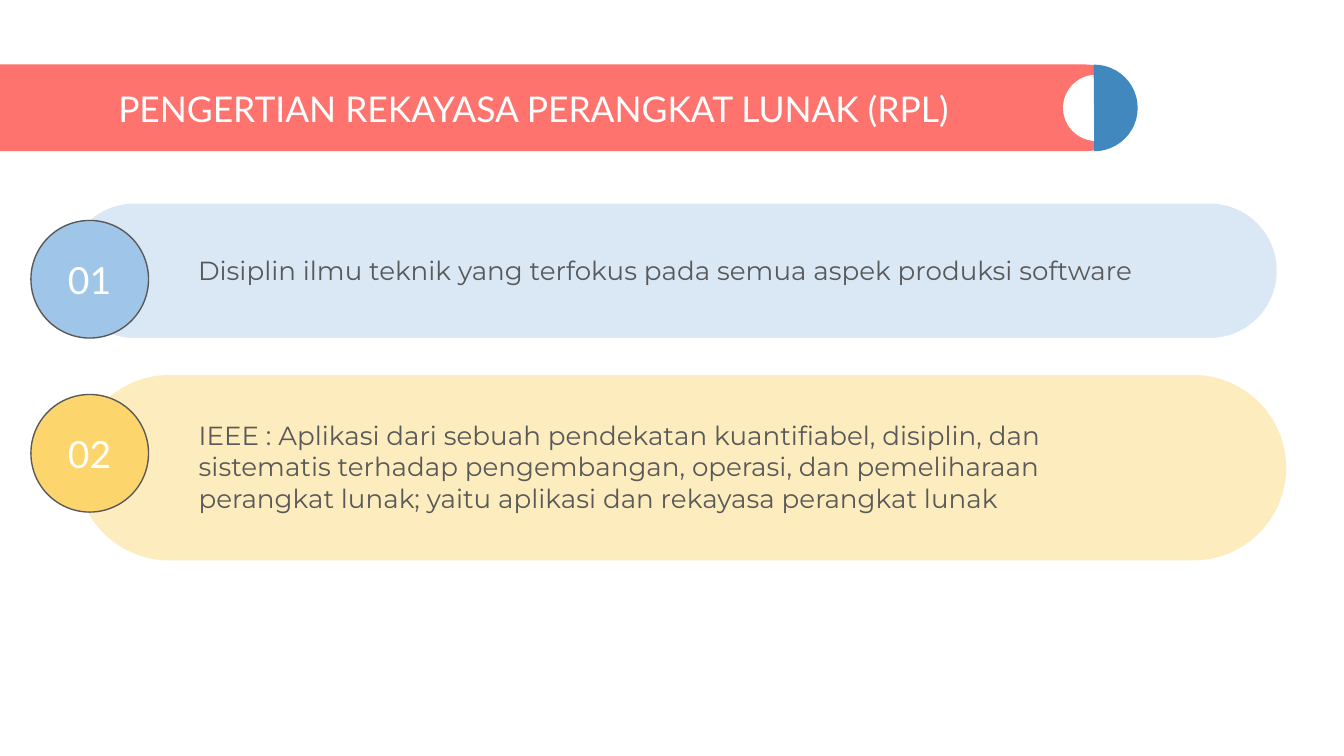
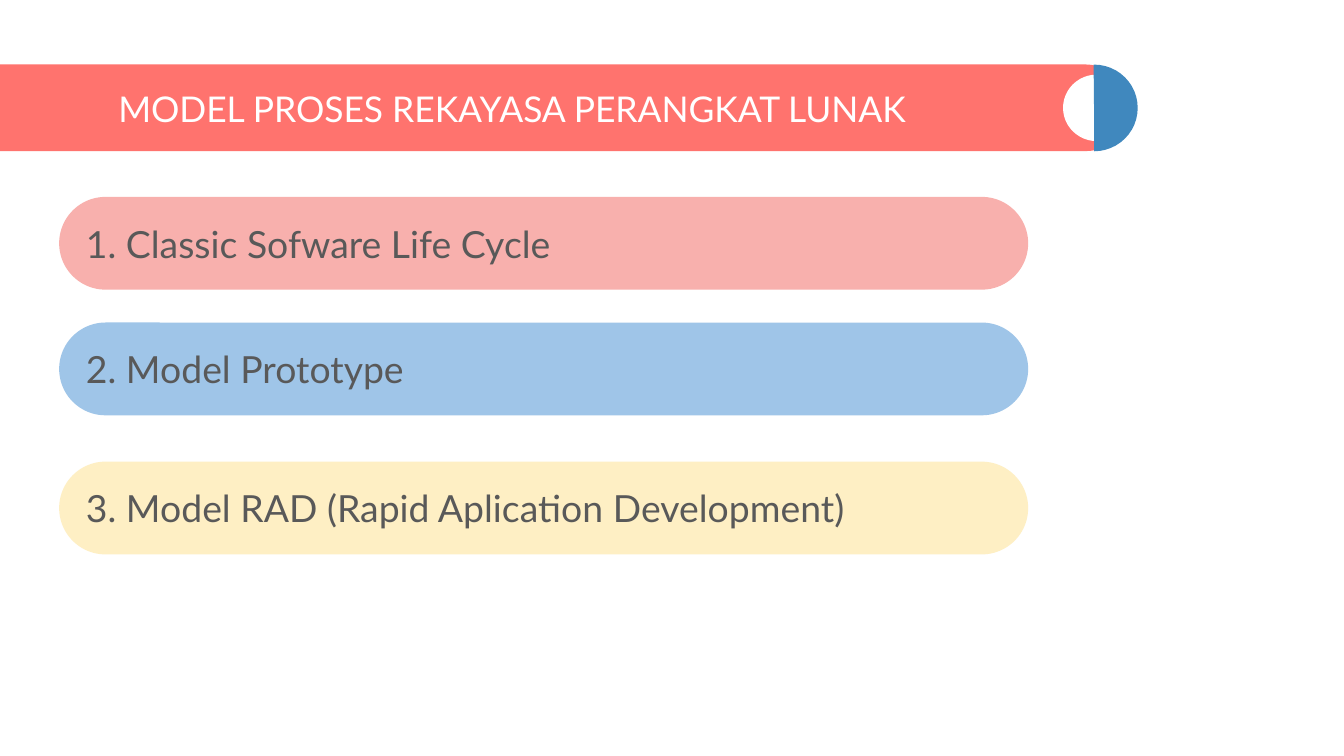
"""Build two slides on software engineering: its definition and its process models."""
from lxml.etree import SubElement
from pptx import Presentation
from pptx.dml.color import RGBColor
from pptx.enum.shapes import MSO_SHAPE
from pptx.enum.text import MSO_ANCHOR, MSO_AUTO_SIZE, PP_ALIGN
from pptx.oxml.ns import qn
from pptx.util import Pt

PX = 4572
COLORS = {
    "coral": "FF736E", "ocean": "4088BE", "white": "FFFFFF", "grey": "595959",
    "sky": "9FC5E8", "amber": "FBBE18", "gold": "FCD66C", "rose": "F8B0AD", "cream": "FEEFC4",
}


def add_block(slide, kind, box, color, opacity=100):
    shape = slide.shapes.add_shape(kind, *(value * PX for value in box))
    shape.shadow.inherit = False
    shape.line.fill.background()
    shape.fill.solid()
    shape.fill.fore_color.rgb = RGBColor.from_string(COLORS[color])
    if opacity < 100:
        color_element = shape.element.spPr.find(qn("a:solidFill"))[0]
        SubElement(color_element, qn("a:alpha")).set("val", str(opacity * 1000))
    if kind == MSO_SHAPE.ROUNDED_RECTANGLE:
        shape.adjustments[0] = 0.5
    return shape


def write(shape, text, size, color, font="Lato", align=PP_ALIGN.LEFT, anchor=MSO_ANCHOR.MIDDLE):
    frame = shape.text_frame
    frame.text = text
    frame.word_wrap = True
    frame.auto_size = MSO_AUTO_SIZE.NONE
    frame.vertical_anchor = anchor
    frame.margin_left = frame.margin_right = frame.margin_top = frame.margin_bottom = 20 * PX
    paragraph = frame.paragraphs[0]
    paragraph.alignment = align
    paragraph.font.name = font
    paragraph.font.size = Pt(size)
    paragraph.font.color.rgb = RGBColor.from_string(COLORS[color])
    return paragraph


presentation = Presentation()
presentation.slide_width = 2000 * PX
presentation.slide_height = 1125 * PX
layout = presentation.slide_layouts[5]

titles = ["PENGERTIAN REKAYASA PERANGKAT LUNAK (RPL)", "MODEL PROSES REKAYASA PERANGKAT LUNAK"]
slides = []
for title_text in titles:
    slide = presentation.slides.add_slide(layout)
    title = slide.shapes.title
    title.left, title.top, title.width, title.height = (value * PX for value in (156, 120, 1394, 82))
    write(title, title_text, 19, "white")
    slides.append(slide)
definition, models = slides

band = add_block(definition, MSO_SHAPE.ROUNDED_RECTANGLE, (-64, 96, 1744, 129), "coral")
disc = add_block(definition, MSO_SHAPE.OVAL, (1582, 111, 100, 99), "white")
half_disc = add_block(definition, MSO_SHAPE.PIE, (1563, 96, 130, 129), "ocean")
half_disc.rotation = 180
half_disc.adjustments[0] = 53.67
half_disc.adjustments[1] = 162
for shape in (band, disc, half_disc):
    layout.shapes.element.append(shape.element)

definitions = [
    ("01", "Disiplin ilmu teknik yang terfokus pada semua aspek produksi software",
     (100, 303, 1800, 200), "sky", 38, (275, 358, 1524, 178), 328, "sky"),
    ("02", "IEEE : Aplikasi dari sebuah pendekatan kuantifiabel, disiplin, dan sistematis terhadap "
     "pengembangan, operasi, dan pemeliharaan perangkat lunak; yaitu aplikasi dan rekayasa "
     "perangkat lunak",
     (114, 558, 1800, 276), "amber", 28, (276, 604, 1476, 178), 587, "gold"),
]
badges = []
for number, text, panel_box, panel_color, opacity, text_box, badge_top, badge_color in definitions:
    add_block(definition, MSO_SHAPE.ROUNDED_RECTANGLE, panel_box, panel_color, opacity)
    body = definition.shapes.add_textbox(*(value * PX for value in text_box))
    paragraph = write(body, text, 14, "grey", font="Montserrat", anchor=MSO_ANCHOR.TOP)
    paragraph.space_after = Pt(16)
    badge = add_block(definition, MSO_SHAPE.OVAL, (46, badge_top, 175, 175), badge_color)
    badge.line.color.rgb = RGBColor.from_string(COLORS["grey"])
    badge.line.width = Pt(0.75)
    write(badge, number, 20, "white", align=PP_ALIGN.CENTER)

process_models = [
    ("1. Classic Sofware Life Cycle", 293, "rose"),
    ("2. Model Prototype", 480, "sky"),
    ("3. Model RAD (Rapid Aplication Development)", 687, "cream"),
]
for text, top, color in process_models:
    pill = add_block(models, MSO_SHAPE.ROUNDED_RECTANGLE, (88, top, 1442, 138), color)
    write(pill, text, 20, "grey")

presentation.save("out.pptx")
